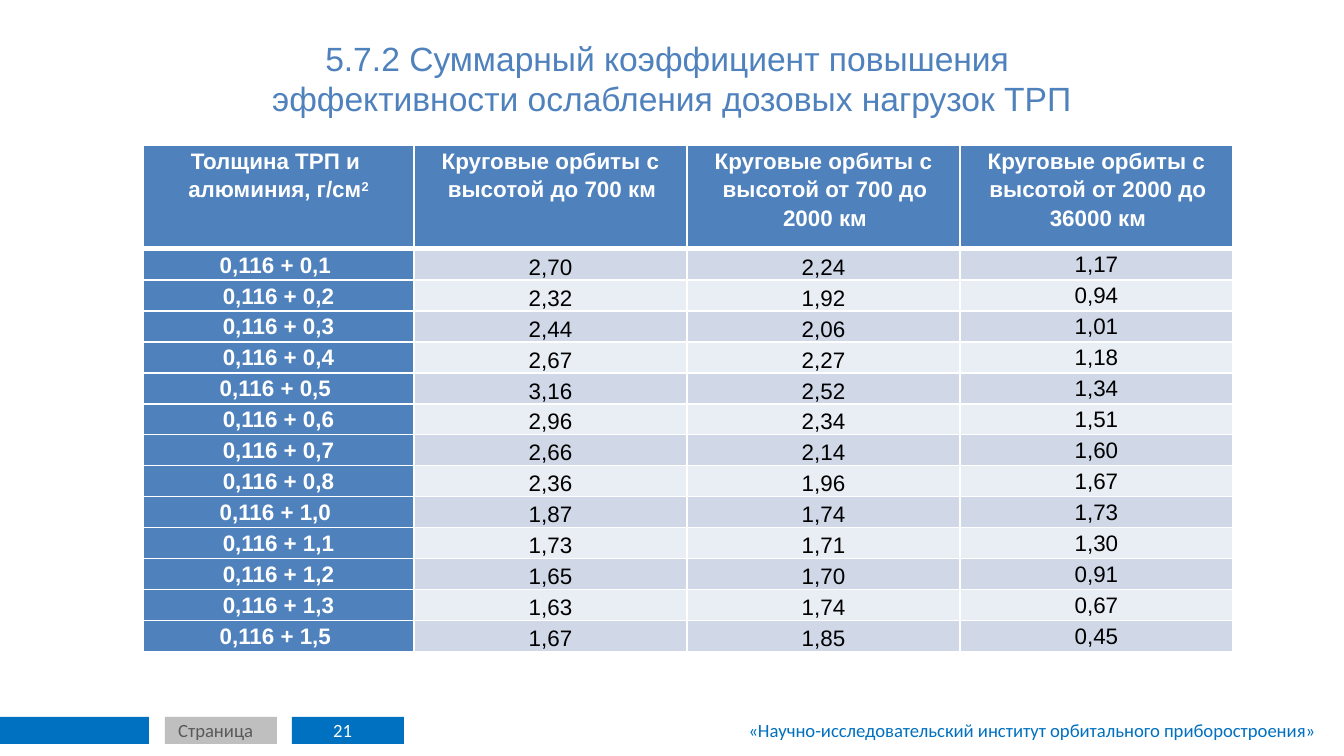
from lxml import etree
from pptx import Presentation
from pptx import util as u
from pptx.dml.color import RGBColor
from pptx.enum import shapes, text
from pptx.oxml.ns import qn

COLORS = {
    "title": "4F81BD",
    "head": "4F81BD",
    "band_dark": "D0D8E8",
    "band_light": "E9EDF4",
    "footer_blue": "0070C0",
    "footer_gray": "BFBFBF",
    "page_label": "595959",
    "white": "FFFFFF",
    "black": "000000",
}
TITLE = ["5.7.2 Суммарный коэффициент повышения ",
         "эффективности ослабления дозовых нагрузок ТРП"]
HEADERS = [
    "Круговые орбиты с высотой до 700 км",
    "Круговые орбиты с высотой от 700 до 2000 км",
    "Круговые орбиты с высотой от 2000 до 36000 км",
]
ROWS = [
    ("0,116 + 0,1 ", "2,70", "2,24", "1,17"),
    ("0,116 + 0,2", "2,32", "1,92", "0,94"),
    ("0,116 + 0,3", "2,44", "2,06", "1,01"),
    ("0,116 + 0,4", "2,67", "2,27", "1,18"),
    ("0,116 + 0,5 ", "3,16", "2,52", "1,34"),
    ("0,116 + 0,6", "2,96", "2,34", "1,51"),
    ("0,116 + 0,7", "2,66", "2,14", "1,60"),
    ("0,116 + 0,8", "2,36", "1,96", "1,67"),
    ("0,116 + 1,0 ", "1,87", "1,74", "1,73"),
    ("0,116 + 1,1", "1,73", "1,71", "1,30"),
    ("0,116 + 1,2", "1,65", "1,70", "0,91"),
    ("0,116 + 1,3", "1,63", "1,74", "0,67"),
    ("0,116 + 1,5 ", "1,67", "1,85", "0,45"),
]
COL_WIDTHS = [271, 273, 273, 273]
HEADER_HEIGHT = 104
BODY_HEIGHT = 398
ALIGN = text.PP_ALIGN
ANCHOR = text.MSO_ANCHOR


def px(n):
    return u.Emu(round(n * 914400 / 134.4))


def rgb(name):
    return RGBColor.from_string(COLORS[name])


def add_run(p, content, size, color, font="Arial", bold=False):
    r = p.add_run()
    r.text = content
    r.font.size = u.Pt(size)
    r.font.name = font
    r.font.bold = bold
    r.font.color.rgb = rgb(color)
    return r


def add_bar(s, left, width, color):
    sp = s.shapes.add_shape(shapes.MSO_SHAPE.RECTANGLE,
                            px(left), px(717), px(width), px(27))
    sp.shadow.inherit = False
    sp.fill.solid()
    sp.fill.fore_color.rgb = rgb(color)
    sp.line.fill.background()


def add_label(s, left, width, content, color, align=ALIGN.LEFT):
    tf = s.shapes.add_textbox(px(left), px(712), px(width), px(36)).text_frame
    tf.word_wrap = True
    p = tf.paragraphs[0]
    p.alignment = align
    add_run(p, content, 10, color, "Calibri")


def add_title(s):
    sp = s.shapes.title
    sp.left, sp.top, sp.width, sp.height = px(67), px(31), px(1210), px(83)
    tf = sp.text_frame
    tf.auto_size = text.MSO_AUTO_SIZE.NONE
    tf.vertical_anchor = ANCHOR.TOP
    p = tf.paragraphs[0]
    p.alignment = ALIGN.CENTER
    add_run(p, TITLE[0], 18, "title")
    p.add_line_break()
    add_run(p, TITLE[1], 18, "title")


def set_borders(cell, top=1, bottom=1):
    tcPr = cell._tc.get_or_add_tcPr()
    for side, width in (("L", 1), ("R", 1), ("T", top), ("B", bottom)):
        ln = etree.SubElement(tcPr, qn(f"a:ln{side}"), w=str(u.Pt(width)))
        fill = etree.SubElement(ln, qn("a:solidFill"))
        etree.SubElement(fill, qn("a:srgbClr"), val=COLORS["white"])


def format_cell(cell, fill, anchor=ANCHOR.TOP, insets=(9, 0, 9, 0)):
    cell.fill.solid()
    cell.fill.fore_color.rgb = rgb(fill)
    cell.vertical_anchor = anchor
    (cell.margin_left, cell.margin_top,
     cell.margin_right, cell.margin_bottom) = map(px, insets)


def format_header(p, margin):
    p.alignment = ALIGN.CENTER
    p.line_spacing = 1.15
    pPr = p._p.get_or_add_pPr()
    pPr.set("marL", str(px(margin)))
    pPr.set("indent", str(px(-3)))


def fill_header(table):
    for cell in table.rows[0].cells:
        set_borders(cell, bottom=3)
        format_cell(cell, "head")
    tf = table.cell(0, 0).text_frame
    p = tf.paragraphs[0]
    format_header(p, 0)
    add_run(p, "Толщина ТРП и ", 12, "white", bold=True)
    p = tf.add_paragraph()
    format_header(p, 0)
    add_run(p, "алюминия, г/см", 12, "white", bold=True)
    r = add_run(p, "2", 12, "white", bold=True)
    r._r.get_or_add_rPr().set("baseline", "30000")
    for col, content in enumerate(HEADERS, 1):
        p = table.cell(0, col).text_frame.paragraphs[0]
        format_header(p, 3)
        add_run(p, content, 12, "white", bold=True)


def fill_body(table):
    for row, values in enumerate(ROWS, 1):
        band = "band_dark" if row % 2 else "band_light"
        for col, value in enumerate(values):
            cell = table.cell(row, col)
            set_borders(cell, top=3 if row == 1 else 1)
            p = cell.text_frame.paragraphs[0]
            p.alignment = ALIGN.CENTER
            if col == 0:
                format_cell(cell, "head")
                p.line_spacing = 1.15
            elif col < 3:
                format_cell(cell, band, ANCHOR.BOTTOM)
            else:
                format_cell(cell, band, ANCHOR.MIDDLE, (1, 1, 1, 0))
            add_run(p, value, 12, "black" if col else "white", bold=col == 0)


def add_coefficients(s):
    table = s.shapes.add_table(
        len(ROWS) + 1, len(COL_WIDTHS), px(143), px(145),
        px(sum(COL_WIDTHS)), px(HEADER_HEIGHT + BODY_HEIGHT)).table
    table.first_row = False
    table.horz_banding = False
    for column, width in zip(table.columns, COL_WIDTHS):
        column.width = px(width)
    for i, row in enumerate(table.rows):
        row.height = px(BODY_HEIGHT / len(ROWS)) if i else px(HEADER_HEIGHT)
    fill_header(table)
    fill_body(table)


def add_footer(s):
    add_bar(s, 0, 149, "footer_blue")
    add_bar(s, 165, 112, "footer_gray")
    add_bar(s, 292, 112, "footer_blue")
    add_label(s, 320, 261, "21", "white")
    add_label(s, 165, 112, "Страница", "page_label")
    add_label(s, 503, 825,
              "«Научно-исследовательский институт орбитального приборостроения»",
              "footer_blue", ALIGN.RIGHT)


def main():
    prs = Presentation()
    prs.slide_width, prs.slide_height = px(1344), px(756)
    s = prs.slides.add_slide(prs.slide_layouts[5])
    add_footer(s)
    add_title(s)
    add_coefficients(s)
    prs.save("out.pptx")


if __name__ == "__main__":
    main()
